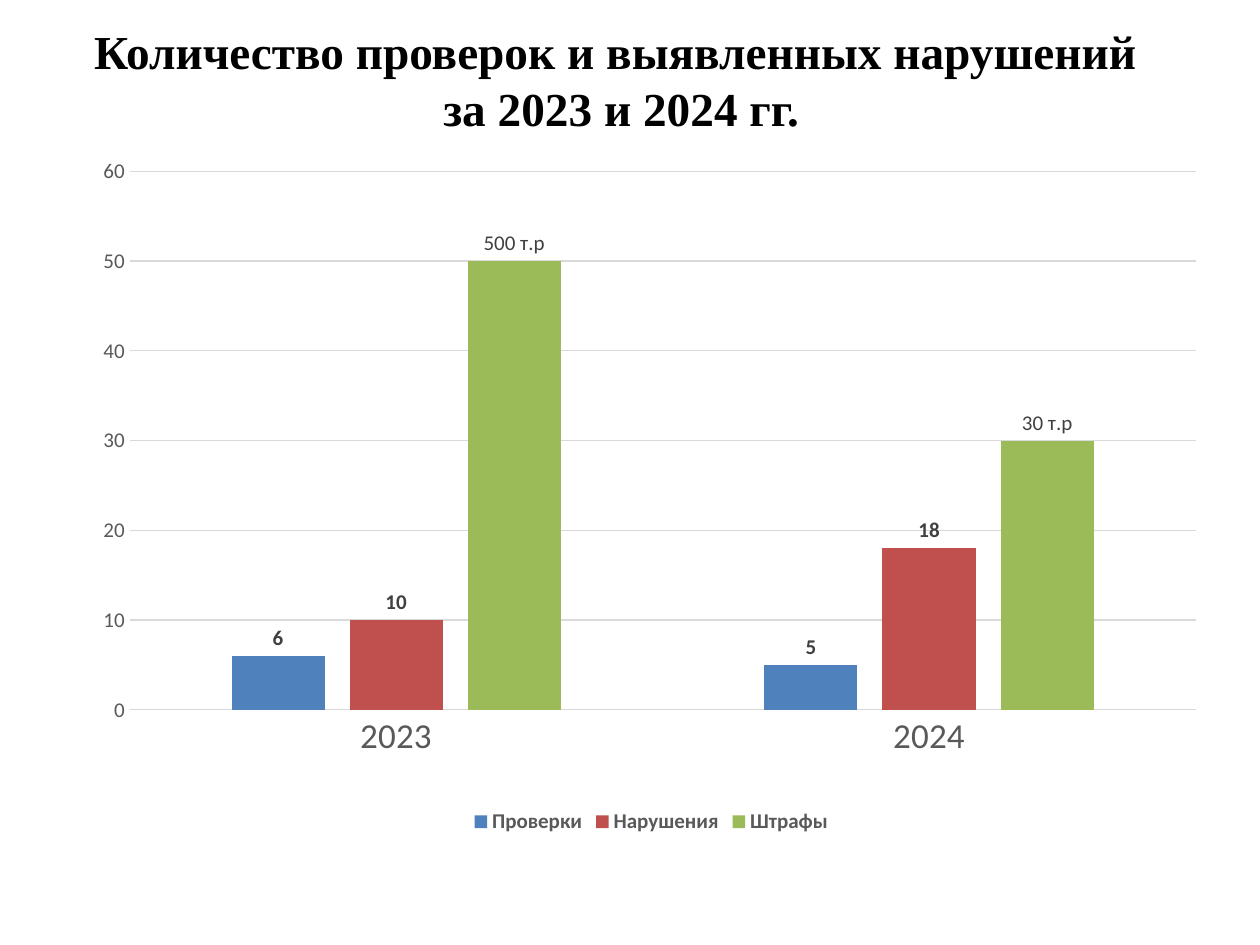
"""Build a slide with a column chart of checks, violations and fines."""
import lxml.etree
import pptx
import pptx.chart.data
import pptx.dml.color
import pptx.enum.chart
import pptx.enum.text
import pptx.oxml.ns
import pptx.util

Cm = pptx.util.Cm
Pt = pptx.util.Pt
RGBColor = pptx.dml.color.RGBColor
BLACK = RGBColor(0x00, 0x00, 0x00)
DARK = RGBColor(0x40, 0x40, 0x40)
GRAY = RGBColor(0x59, 0x59, 0x59)
PALE = RGBColor(0xD9, 0xD9, 0xD9)
BLUE = RGBColor(0x4F, 0x81, 0xBD)
RED = RGBColor(0xC0, 0x50, 0x4D)
GREEN = RGBColor(0x9B, 0xBB, 0x59)


def style(font, size, color, bold=False, name="Calibri"):
    font.name = name
    font.size = Pt(size)
    font.bold = bold
    font.color.rgb = color


deck = pptx.Presentation()
deck.slide_width = Cm(25.4)
deck.slide_height = Cm(19.05)
slide = deck.slides.add_slide(deck.slide_layouts[6])

title = slide.shapes.add_textbox(Cm(1.09), Cm(0), Cm(22.86), Cm(3.18))
frame = title.text_frame
frame.word_wrap = True
frame.vertical_anchor = pptx.enum.text.MSO_ANCHOR.MIDDLE
para = frame.paragraphs[0]
para.text = "Количество проверок и выявленных нарушений \vза 2023 и 2024 гг."
para.alignment = pptx.enum.text.PP_ALIGN.CENTER
style(para.font, 27, BLACK, True, "Times New Roman")

rows = [
    ("Проверки", (6, 5), BLUE),
    ("Нарушения", (10, 18), RED),
    ("Штрафы", (50, 30), GREEN),
]
data = pptx.chart.data.CategoryChartData()
data.categories = ["2023", "2024"]
for name, vals, color in rows:
    data.add_series(name, vals)
chart = slide.shapes.add_chart(
    pptx.enum.chart.XL_CHART_TYPE.COLUMN_CLUSTERED,
    Cm(1.7), Cm(3.18), Cm(22.86), Cm(13.74), data,
).chart
style(chart.font, 10, BLACK)
chart.has_title = False
chart.has_legend = True
chart.legend.position = pptx.enum.chart.XL_LEGEND_POSITION.BOTTOM
chart.legend.include_in_layout = False
style(chart.legend.font, 12, GRAY, True)

for axis, size in ((chart.category_axis, 20), (chart.value_axis, 12)):
    axis.major_tick_mark = pptx.enum.chart.XL_TICK_MARK.NONE
    axis.minor_tick_mark = pptx.enum.chart.XL_TICK_MARK.NONE
    style(axis.tick_labels.font, size, GRAY)
chart.value_axis.minimum_scale = 0
chart.value_axis.maximum_scale = 60
chart.value_axis.major_unit = 10
chart.value_axis.format.line.fill.background()
for line in (chart.category_axis.format.line, chart.value_axis.major_gridlines.format.line):
    line.color.rgb = PALE
    line.width = Pt(0.75)

plot = chart.plots[0]
plot.gap_width = 219
plot.overlap = -27
plot.vary_by_categories = False
for series, (name, vals, color) in zip(plot.series, rows):
    series.format.fill.solid()
    series.format.fill.fore_color.rgb = color
    labels = series.data_labels
    labels.show_value = True
    labels.position = pptx.enum.chart.XL_LABEL_POSITION.OUTSIDE_END
    style(labels.font, 12, DARK, True)

for index, text in enumerate(("500 т.р", "30 т.р")):
    label = plot.series[2].points[index].data_label
    run = label.text_frame.paragraphs[0].add_run()
    run.text = text
    style(run.font, 12, DARK)
    label.position = pptx.enum.chart.XL_LABEL_POSITION.OUTSIDE_END

qn = pptx.oxml.ns.qn
area = chart.element.find(".//" + qn("c:plotArea"))
for old in area.findall(qn("c:layout")):
    area.remove(old)
layout = lxml.etree.Element(qn("c:layout"))
area.insert(0, layout)
manual = lxml.etree.SubElement(layout, qn("c:manualLayout"))
for tag, val in (
    ("layoutTarget", "inner"), ("xMode", "edge"), ("yMode", "edge"),
    ("x", "0.04"), ("y", "0.02"), ("w", "0.94"), ("h", "0.79"),
):
    lxml.etree.SubElement(manual, qn("c:" + tag)).set("val", val)

deck.save("out.pptx")
